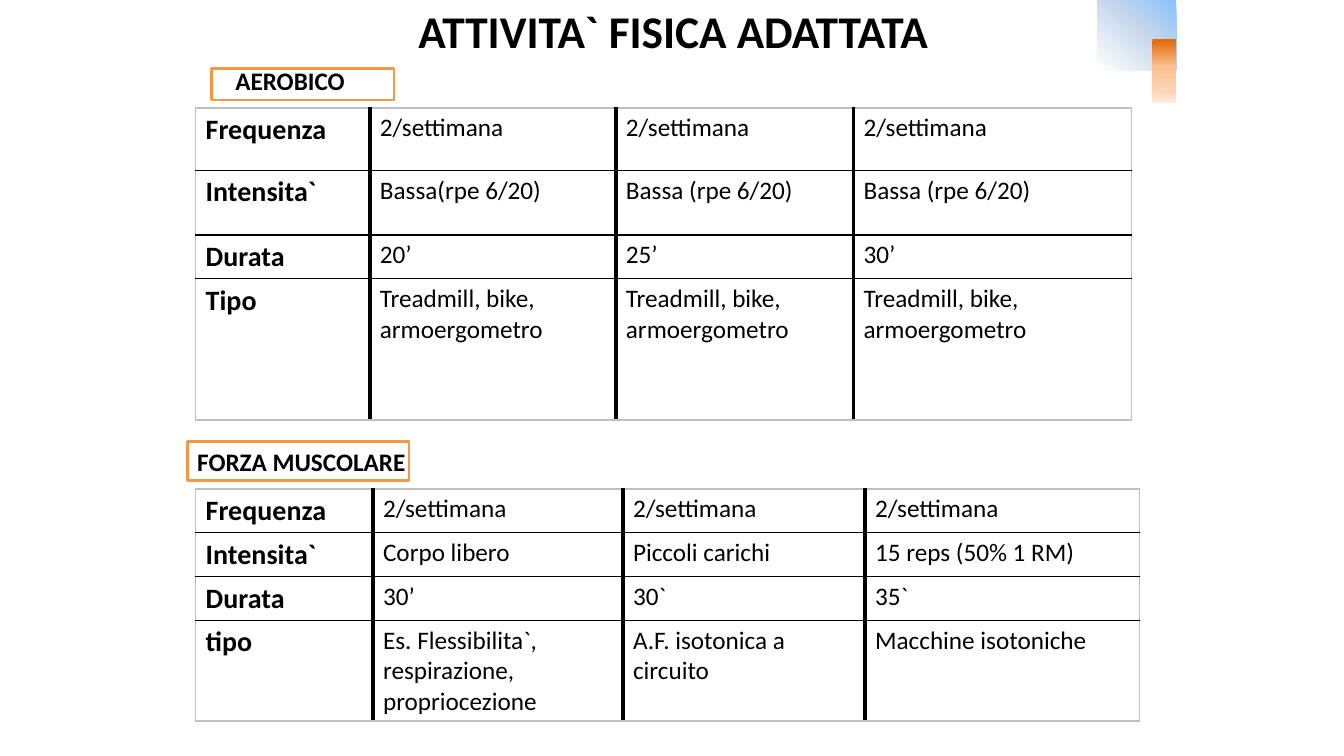
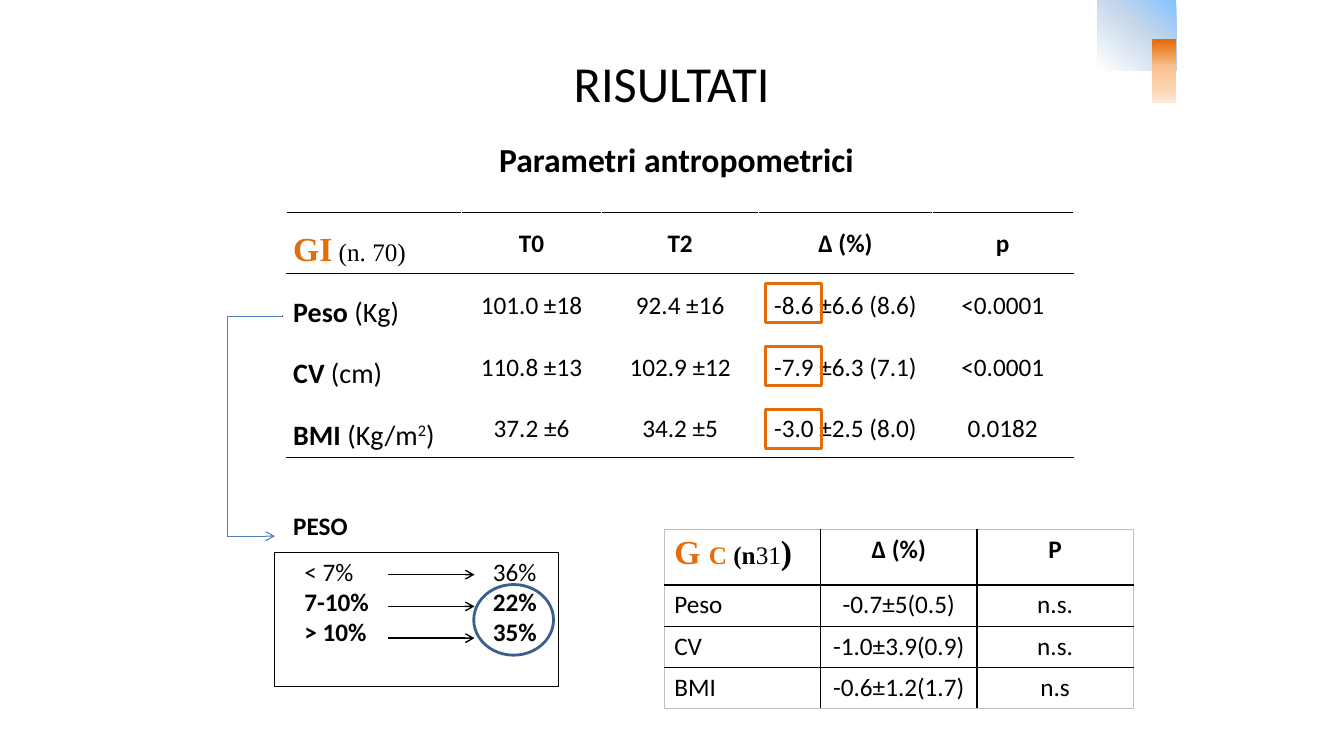
import pptx
import pptx.dml.color
import pptx.enum.shapes
import pptx.enum.text
import pptx.oxml
import pptx.oxml.ns
import pptx.util
from lxml import etree

Cm, Pt = pptx.util.Cm, pptx.util.Pt
qn = pptx.oxml.ns.qn
SHAPE = pptx.enum.shapes.MSO_SHAPE
LINK = pptx.enum.shapes.MSO_CONNECTOR
CENTER = pptx.enum.text.PP_ALIGN.CENTER
MIDDLE = pptx.enum.text.MSO_ANCHOR.MIDDLE

BLACK, WHITE, EDGE = "000000", "FFFFFF", "BFBFBF"
ORANGE, LABEL_ORANGE = "E46C0A", "F79646"
LINK_BLUE, RING_BLUE = "4B7EBC", "3A5F8C"
SANS, SERIF = "Calibri", "Times New Roman"


def rgb(value):
    return pptx.dml.color.RGBColor.from_string(value)


# ---- text ----
def run(text, size=18, bold=False, color=BLACK, font=SANS, raised=False):
    return dict(text=text, size=size, bold=bold, color=color, font=font, raised=raised)


def write(frame, paragraphs, align=None, spacing=None, after=None):
    """Fill a text frame; each paragraph is a list of runs."""
    for index, runs in enumerate(paragraphs):
        para = frame.paragraphs[0] if index == 0 else frame.add_paragraph()
        para.alignment = align
        if spacing:
            para.line_spacing = spacing
        if after:
            para.space_after = Pt(after)
        for style in runs:
            piece = para.add_run()
            piece.text = style["text"]
            piece.font.size = Pt(style["size"])
            piece.font.bold = style["bold"]
            piece.font.name = style["font"]
            piece.font.color.rgb = rgb(style["color"])
            if style["raised"]:
                piece.font._element.set("baseline", "30000")


def text_box(slide, left, top, width, height, paragraphs, align=None, anchor=None):
    box = slide.shapes.add_textbox(Cm(left), Cm(top), Cm(width), Cm(height))
    box.text_frame.word_wrap = True
    if anchor is not None:
        box.text_frame.vertical_anchor = anchor
    write(box.text_frame, paragraphs, align)


# ---- shapes and lines ----
def outline(slide, left, top, width, height, color=None, weight=1, fill=None, kind=SHAPE.RECTANGLE):
    shape = slide.shapes.add_shape(kind, Cm(left), Cm(top), Cm(width), Cm(height))
    shape.shadow.inherit = False
    if fill:
        shape.fill.solid()
        shape.fill.fore_color.rgb = rgb(fill)
    else:
        shape.fill.background()
    if color:
        shape.line.color.rgb = rgb(color)
        shape.line.width = Pt(weight)
    else:
        shape.line.fill.background()
    return shape


def gradient(shape, stops, angle):
    shape.fill.gradient()
    shape.fill.gradient_angle = 360 - angle
    stop_list = shape._element.spPr.find(qn("a:gradFill")).find(qn("a:gsLst"))
    for stop in list(stop_list):
        stop_list.remove(stop)
    for position, color in stops:
        stop = etree.SubElement(stop_list, qn("a:gs"), pos=str(position * 1000))
        etree.SubElement(stop, qn("a:srgbClr"), val=color)


def line(slide, x1, y1, x2, y2, color, weight, arrow=True, kind=LINK.STRAIGHT):
    link = slide.shapes.add_connector(kind, Cm(x1), Cm(y1), Cm(x2), Cm(y2))
    link.line.color.rgb = rgb(color)
    link.line.width = Pt(weight)
    if arrow:
        etree.SubElement(link.line._get_or_add_ln(), qn("a:tailEnd"), type="arrow")
    etree.SubElement(link._element.spPr, qn("a:effectLst"))
    return link


# ---- tables ----
def border(cell, sides):
    """Set left, right, top and bottom borders, each a (color, points) pair."""
    props = cell._tc.get_or_add_tcPr()
    for index, (tag, (color, weight)) in enumerate(zip(("a:lnL", "a:lnR", "a:lnT", "a:lnB"), sides)):
        edge = etree.Element(qn(tag), w=str(Pt(weight)))
        fill = etree.SubElement(edge, qn("a:solidFill"))
        etree.SubElement(fill, qn("a:srgbClr"), val=color)
        props.insert(index, edge)


def grid(slide, left, top, columns, rows, contents, fill_cell, vertical, horizontal):
    """vertical and horizontal list the rule at every column and row edge."""
    frame = slide.shapes.add_table(len(rows), len(columns), Cm(left), Cm(top),
                                   Cm(sum(columns)), Cm(sum(rows)))
    table = frame.table
    table.first_row = table.horz_banding = False
    for column, width in zip(table.columns, columns):
        column.width = Cm(width)
    for row, height in zip(table.rows, rows):
        row.height = Cm(height)
    for r, values in enumerate(contents):
        for c, value in enumerate(values):
            cell = table.cell(r, c)
            cell.fill.background()
            border(cell, (*vertical[c:c + 2], *horizontal[r:r + 2]))
            fill_cell(cell, r, c, value)


# ---- parts shared by the slides ----
def corner(slide, left, top):
    blue = outline(slide, left, top, 1.98, 1.78)
    gradient(blue, [(0, "85C2FF"), (41, "C4D6EB"), (100, WHITE)], 130)
    amber = outline(slide, left + 1.38, top + 0.99, 0.6, 1.6)
    gradient(amber, [(2, ORANGE), (43, "FAC090"), (81, "FCD5B5"), (100, "FDEADA")], 90)


def new_slide(deck):
    slide = deck.slides.add_slide(deck.slide_layouts[6])
    corner(slide, 27.66, 0)
    return slide


def heading(slide, left, top, width, height, text, size, bold=True, anchor=None):
    text_box(slide, left, top, width, height, [[run(text, size, bold)]], CENTER, anchor)


# ---- training plan ----
def plan_label(slide, left, top, width, height, text, shift_x=0, shift_y=0):
    outline(slide, left, top, width, height, LABEL_ORANGE, 2, WHITE)
    text_box(slide, left + shift_x, top + shift_y, 5.8, 1.02, [[run(text, bold=True)]])


def plan_cell(cell, row, column, value):
    write(cell.text_frame, [[run(value, 18 if column else 20, column == 0)]])


def plan_table(slide, left, top, columns, rows, contents):
    edge, thick, thin = (EDGE, 1), (BLACK, 3), (BLACK, 1)
    grid(slide, left, top, columns, rows, contents, plan_cell,
         [edge, thick, thick, thick, edge], [edge, thin, thin, thin, edge])


def activity_slide(deck):
    slide = new_slide(deck)
    heading(slide, 5.54, 0, 22.86, 1.55, "ATTIVITA` FISICA ADATTATA", 32.4, anchor=MIDDLE)
    plan_label(slide, 5.33, 1.73, 4.6, 0.79, "AEROBICO", 0.35, -0.21)
    plan_label(slide, 4.72, 11.13, 5.59, 0.99, "FORZA MUSCOLARE")
    plan_table(slide, 4.93, 12.32, [4.47, 6.3, 6.1, 6.91], [1.02, 1.02, 1.02, 2.34], [
        ["Frequenza"] + ["2/settimana"] * 3,
        ["Intensita`", "Corpo libero", "Piccoli carichi", "15 reps (50% 1 RM)"],
        ["Durata", "30’", "30`", "35`"],
        ["tipo", "Es. Flessibilita`, respirazione, propriocezione",
         "A.F. isotonica a circuito", "Macchine isotoniche"],
    ])
    plan_table(slide, 4.93, 2.72, [4.39, 6.2, 5.99, 7.01], [1.57, 1.63, 1.02, 3.56], [
        ["Frequenza"] + ["2/settimana"] * 3,
        ["Intensita`", "Bassa(rpe 6/20)", "Bassa (rpe 6/20)", "Bassa (rpe 6/20)"],
        ["Durata", "20’", "25’", "30’"],
        ["Tipo"] + ["Treadmill, bike, armoergometro"] * 3,
    ])


# ---- results ----
def treated_cell(cell, row, column, value):
    cell.margin_left = cell.margin_right = Cm(0.18)
    cell.margin_top = cell.margin_bottom = Cm(0)
    if row:
        cell.vertical_anchor = MIDDLE
    if column == 0:
        write(cell.text_frame, [value], spacing=1.5)
    elif row == 0:
        write(cell.text_frame, [[run(value, bold=True)]], CENTER, 1.5)
    else:
        write(cell.text_frame, [[run(value)]], CENTER, 1.15, 10)


def treated_group(slide, left, top):
    def measure(name, *unit):
        return [run(name, 20, True), *unit]

    group = [run("GI", 24, True, ORANGE, SERIF), run(" (n. 70)", font=SERIF)]
    square_metre = [run(" (Kg/m", 20), run("2", 20, raised=True), run(")", 20)]
    white, black = (WHITE, 1), (BLACK, 1)
    grid(slide, left, top, [4.42, 3.53, 3.96, 4.37, 3.56], [1.52, 1.55, 1.55, 1.55], [
        [group, "T0", "T2", "∆ (%)", "p"],
        [measure("Peso", run(" (Kg)", 20)), "101.0 ±18", "92.4 ±16", "-8.6 ±6.6 (8.6)", "<0.0001"],
        [measure("CV", run(" (cm)", 20)), "110.8 ±13", "102.9 ±12", "-7.9 ±6.3 (7.1)", "<0.0001"],
        [measure("BMI", *square_metre), "37.2 ±6", "34.2 ±5", "-3.0 ±2.5 (8.0)", "0.0182"],
    ], treated_cell, [white] * 6, [black, black, white, white, black])
    # frames around the mean changes
    for index in range(3):
        outline(slide, left + 12.09, top + 1.78 + 1.59 * index, 1.4, 0.99, ORANGE, 2.25)


def control_cell(cell, row, column, value):
    runs = value if isinstance(value, list) else [run(value, bold=row == 0)]
    write(cell.text_frame, [runs], CENTER if column else None)


def control_group(slide, left, top):
    group = [run("G ", 24, True, ORANGE, SERIF), run("C ", 18, True, ORANGE, SERIF),
             run("(n", bold=True, font=SERIF), run("31", font=SERIF), run(")", 24, True, font=SERIF)]
    edge, thin = (EDGE, 1), (BLACK, 1)
    grid(slide, left, top, [3.94] * 3, [1.4, 1.04, 1.04, 1.04], [
        [group, "∆ (%)", "P"],
        ["Peso", "-0.7±5(0.5)", "n.s."],
        ["CV", "-1.0±3.9(0.9)", "n.s."],
        ["BMI", "-0.6±1.2(1.7)", "n.s"],
    ], control_cell, [edge, thin, thin, edge], [edge, thin, thin, thin, edge])


def weight_loss(slide, left, top):
    outline(slide, left, top, 7.14, 3.38, BLACK, 0.75)
    text_box(slide, left + 0.21, top - 1.19, 3.4, 1.02, [[run("PESO", bold=True)]])
    # thresholds, arrows and shares of patients
    for shift, width, values in ((0.49, 2.39, ("< 7%", "7-10%", "> 10%")),
                                 (5.24, 1.78, ("36%", "22%", "35%"))):
        text_box(slide, left + shift, top - 0.03, width, 2.57,
                 [[run(value, bold=index > 0)] for index, value in enumerate(values)])
    for index in range(3):
        y = top + 0.56 + 0.8 * index
        line(slide, left + 2.85, y, left + 5.03, y, BLACK, 1)
    outline(slide, left + 5.01, top + 0.81, 2.01, 1.78, RING_BLUE, 2, kind=SHAPE.OVAL)
    # link from the weight row: a quarter-turned elbow, then an arrow
    elbow = line(slide, left - 3.3, top - 3.89, left + 2.29, top - 2.49,
                 LINK_BLUE, 0.75, arrow=False, kind=LINK.ELBOW)
    props = elbow._element.spPr
    props.find(qn("a:xfrm")).set("rot", str(90 * 60000))
    adjust = props.find(qn("a:prstGeom")).find(qn("a:avLst"))
    etree.SubElement(adjust, qn("a:gd"), name="adj1", fmla="val 600")
    line(slide, left - 1.19, top - 0.41, left, top - 0.41, LINK_BLUE, 0.75)


def results_slide(deck):
    slide = new_slide(deck)
    heading(slide, 13.16, 1.19, 7.54, 1.8, "RISULTATI", 36, bold=False)
    heading(slide, 11.79, 3.38, 10.52, 1.3, "Parametri antropometrici", 24)
    treated_group(slide, 7.21, 5.36)
    weight_loss(slide, 6.93, 13.92)
    control_group(slide, 16.74, 13.34)


def main():
    deck = pptx.Presentation()
    deck.slide_width, deck.slide_height = Cm(33.87), Cm(19.05)
    activity_slide(deck)
    results_slide(deck)
    deck.save("out.pptx")


if __name__ == "__main__":
    main()
